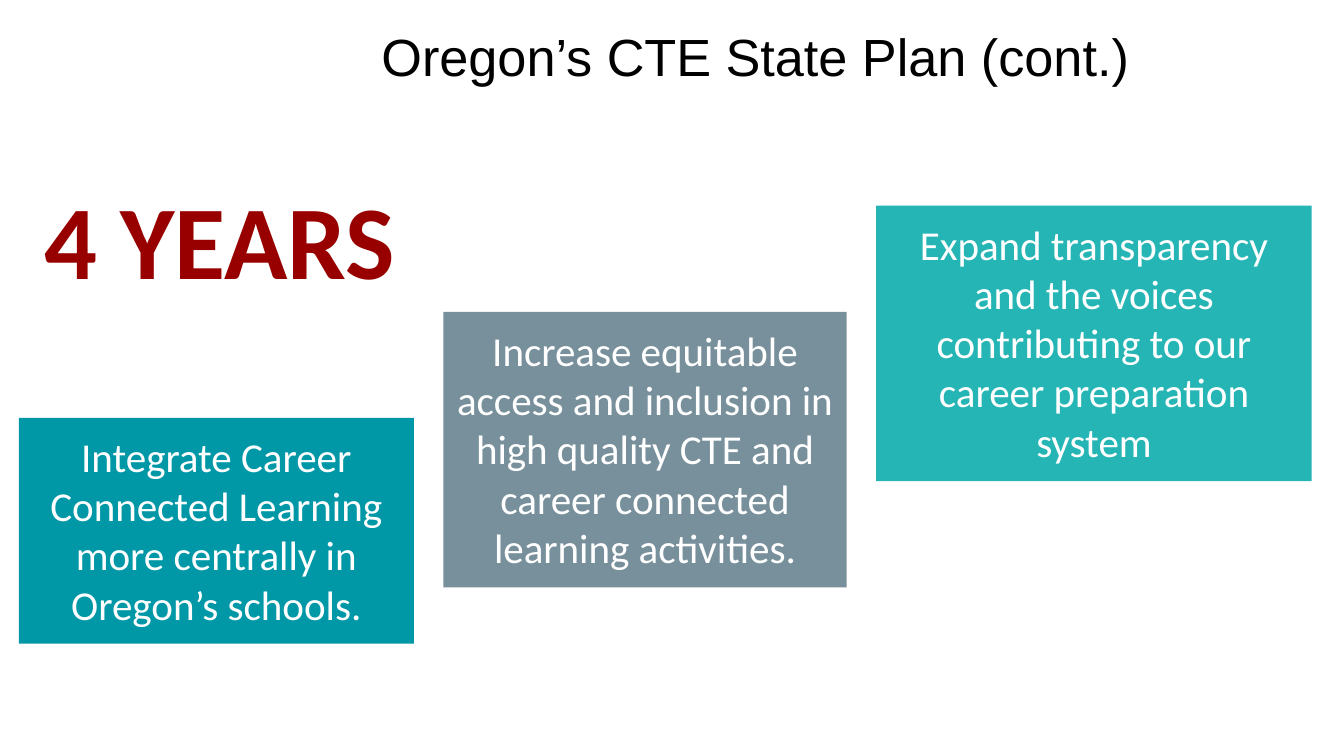
from pptx import Presentation
from pptx.dml.color import RGBColor
from pptx.enum.shapes import MSO_SHAPE as Shape
from pptx.enum.text import MSO_ANCHOR as Anchor, PP_ALIGN as Align
from pptx.util import Inches, Pt

# Content
TITLE = "Oregon’s CTE State Plan (cont.)"
SPAN = "4 YEARS"
GOALS = [  # text, fill, width, height
    ("Integrate Career Connected Learning more centrally in Oregon’s schools.",
     "0097A7", 2.94, 1.68),
    ("Increase equitable access and inclusion in high quality CTE and "
     "career connected learning activities.", "78909C", 3, 2.05),
    ("Expand transparency and the voices contributing to our career "
     "preparation system", "26B5B5", 3.24, 2.05),
]

# Stair of goals: first corner, gap between boxes, rise per step
LEFT, TOP, GAP, RISE = 0.14, 3.11, 0.22, 0.79


def color(code):
    return RGBColor.from_string(code)


def write(shape, text, size, code, font="Calibri", bold=False,
          align=Align.LEFT, anchor=Anchor.TOP, pad=0.1):
    frame = shape.text_frame
    frame.word_wrap = True
    frame.vertical_anchor = anchor
    frame.margin_left = frame.margin_right = Inches(0.1)
    frame.margin_top = frame.margin_bottom = Inches(pad)
    para = frame.paragraphs[0]
    para.alignment = align
    run = para.add_run()
    run.text = text
    run.font.name = font
    run.font.size = Pt(size)
    run.font.bold = bold
    run.font.color.rgb = color(code)
    return para


# Slide, 16:9
deck = Presentation()
deck.slide_width = Inches(10)
deck.slide_height = Inches(10 * 9 / 16)
shapes = deck.slides.add_slide(deck.slide_layouts[6]).shapes

# Title
box = shapes.add_textbox(Inches(2.74), Inches(-0.1), Inches(7.26), Inches(1.09))
para = write(box, TITLE, 28, "000000", font="Arial", anchor=Anchor.MIDDLE, pad=0.05)
para.line_spacing = 0.9

# Time span
box = shapes.add_textbox(Inches(0.23), Inches(1.2), Inches(4.21), Inches(1.14))
write(box, SPAN, 56, "980000", bold=True)

# Goals, each one step higher than the last
left = LEFT
for step, (text, fill, width, height) in enumerate(GOALS):
    box = shapes.add_shape(Shape.RECTANGLE, Inches(left), Inches(TOP - step * RISE),
                           Inches(width), Inches(height))
    box.shadow.inherit = False
    box.fill.solid()
    box.fill.fore_color.rgb = color(fill)
    box.line.fill.background()
    write(box, text, 22, "FFFFFF", align=Align.CENTER)
    left += width + GAP

deck.save("out.pptx")
